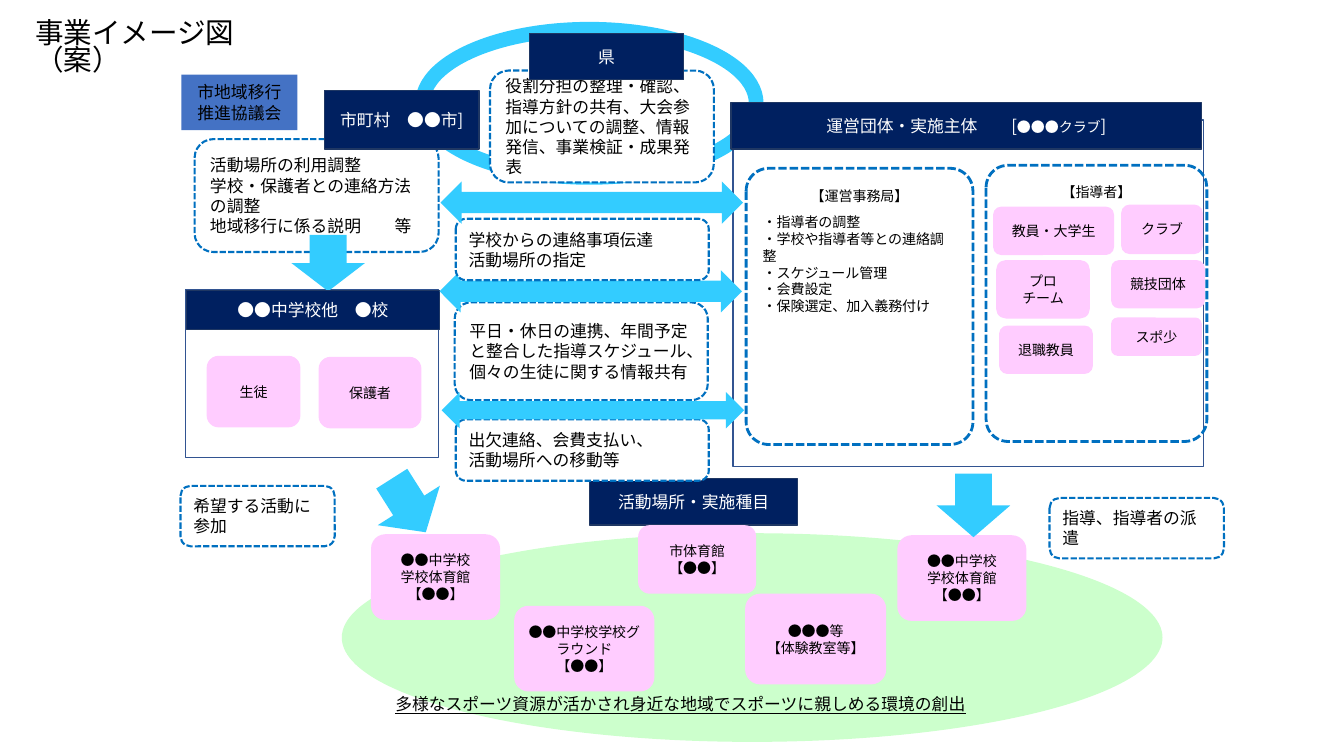
from lxml import etree
from pptx import Presentation
from pptx.dml.color import RGBColor
from pptx.enum import dml, shapes, text
from pptx.oxml import ns
from pptx.util import Inches, Pt

FONT = "Noto Sans CJK JP"
BLACK = RGBColor(0x00, 0x00, 0x00)
WHITE = RGBColor(0xFF, 0xFF, 0xFF)
NAVY = RGBColor(0x00, 0x20, 0x60)
NAVY_EDGE = RGBColor(0x1F, 0x37, 0x63)
FRAME_EDGE = RGBColor(0x32, 0x54, 0x91)
DASH_BLUE = RGBColor(0x00, 0x70, 0xC0)
COUNCIL_BLUE = RGBColor(0x44, 0x72, 0xC4)
SKY = RGBColor(0x33, 0xCC, 0xFF)
PINK = RGBColor(0xFF, 0xCC, 0xFF)
GREEN = RGBColor(0xCC, 0xFF, 0xCC)

KIND = shapes.MSO_SHAPE
ALIGN = text.PP_ALIGN
DASHED = dml.MSO_LINE.SQUARE_DOT

prs = Presentation()
prs.slide_width, prs.slide_height = Inches(13.33), Inches(7.5)
slide = prs.slides.add_slide(prs.slide_layouts[6])


def write(holder, words, size, color=BLACK, align=ALIGN.CENTER, anchor=text.MSO_ANCHOR.MIDDLE):
    frame = holder.text_frame
    frame.word_wrap = True
    frame.vertical_anchor = anchor
    frame.text = words
    for paragraph in frame.paragraphs:
        paragraph.alignment = align
        for run in paragraph.runs:
            run.font.size = Pt(size)
            run.font.color.rgb = color
            run.font.name = FONT
            east_asian = etree.SubElement(run.font._element, ns.qn("a:ea"))
            east_asian.set("typeface", FONT)
    return frame


def draw(kind, at, fill=None, edge=None, width=1, dash=None):
    shape = slide.shapes.add_shape(kind, *[Inches(length) for length in at])
    shape.shadow.inherit = False
    if fill is None:
        shape.fill.background()
    else:
        shape.fill.solid()
        shape.fill.fore_color.rgb = fill
    if edge is None:
        shape.line.fill.background()
    else:
        shape.line.color.rgb = edge
        shape.line.width = Pt(width)
        if dash is not None:
            shape.line.dash_style = dash
    return shape


# Ring that ties prefecture, city and operator together
draw(KIND.OVAL, (4.19, 0.29, 3.31, 1.47), edge=SKY, width=10.5)

# Frames of the school and the operator, and the area of activity
for at in [(1.84, 2.87, 2.51, 1.67), (7.27, 1.19, 4.67, 3.44)]:
    draw(KIND.RECTANGLE, at, WHITE, FRAME_EDGE)
draw(KIND.OVAL, (3.39, 5.29, 8.14, 2.07), GREEN)

# Panels inside the operator
OFFICE = """【運営事務局】
・指導者の調整
・学校や指導者等との連絡調整
・スケジュール管理
・会費設定
・保険選定、加入義務付け"""
for at, words in [((7.4, 1.67, 2.25, 2.74), OFFICE),
                  ((9.78, 1.64, 2.19, 2.74), "【指導者】")]:
    panel = draw(KIND.ROUNDED_RECTANGLE, at, edge=DASH_BLUE, width=2, dash=DASHED)
    panel.adjustments[0] = 0.1
    frame = write(panel, words, 10, align=ALIGN.LEFT, anchor=text.MSO_ANCHOR.TOP)
    frame.margin_top = Inches(0.12)
    frame.paragraphs[0].alignment = ALIGN.CENTER
    frame.paragraphs[0].space_after = Pt(7)

# Dashed notes, headers and arrows, in stacking order
NOTE, HEADER, BOTH_WAYS, DOWN = "note", "header", "both ways", "down"
FLOW = [
    (HEADER, (5.85, 4.75, 2.06, 0.46), "活動場所・実施種目"),
    (NOTE, (1.93, 1.38, 2.42, 1.12),
     "活動場所の利用調整\n学校・保護者との連絡方法の調整\n地域移行に係る説明　　等"),
    (HEADER, (3.22, 0.9, 1.53, 0.58), "市町村　●●市]"),
    (NOTE, (4.52, 4.16, 2.51, 0.61), "出欠連絡、会費支払い、\n活動場所への移動等"),
    (NOTE, (4.51, 3, 2.51, 0.97),
     "平日・休日の連携、年間予定と整合した指導スケジュール、\n個々の生徒に関する情報共有"),
    (NOTE, (10.41, 4.94, 1.73, 0.6), "指導、指導者の派遣"),
    (NOTE, (1.79, 4.82, 1.53, 0.6), "希望する活動に\n参加"),
    (DOWN, (2.89, 2.33, 0.73, 0.56), 0),
    (DOWN, (3.69, 4.7, 0.73, 0.63), 327.6),
    (HEADER, (1.85, 2.88, 2.51, 0.39), "●●中学校他　●校"),
    (BOTH_WAYS, (4.36, 2.68, 3, 0.42), 0),
    (NOTE, (4.52, 2.17, 2.51, 0.61), "学校からの連絡事項伝達\n活動場所の指定"),
    (BOTH_WAYS, (4.37, 1.8, 3, 0.42), 0),
    (BOTH_WAYS, (4.38, 3.89, 3, 0.36), 0),
    (NOTE, (4.86, 0.7, 2.22, 1.11),
     "役割分担の整理・確認、指導方針の共有、大会参加についての調整、情報発信、事業検証・成果発表"),
    (HEADER, (5.25, 0.33, 1.53, 0.46), "県"),
]
for role, at, content in FLOW:
    if role == NOTE:
        note = draw(KIND.ROUNDED_RECTANGLE, at, WHITE, DASH_BLUE, 1.5, DASHED)
        write(note, content, 12, align=ALIGN.LEFT)
    elif role == HEADER:
        write(draw(KIND.RECTANGLE, at, NAVY, NAVY_EDGE), content, 12, WHITE)
    else:
        kind = KIND.DOWN_ARROW if role == DOWN else KIND.LEFT_RIGHT_ARROW
        draw(kind, at, SKY).rotation = content

# Operator header, with the club name set smaller
operator = draw(KIND.RECTANGLE, (7.25, 1.02, 4.67, 0.46), NAVY, NAVY_EDGE)
operator_name = operator.text_frame.paragraphs[0]
for words in ["運営団体・実施主体　　[", "●●●クラブ", "]"]:
    operator_name.add_run().text = words
operator_name.alignment = ALIGN.CENTER
operator.text_frame.vertical_anchor = text.MSO_ANCHOR.MIDDLE
for run, size in zip(operator_name.runs, (12, 10, 12)):
    run.font.size = Pt(size)
    run.font.color.rgb = WHITE
    run.font.name = FONT
    etree.SubElement(run.font._element, ns.qn("a:ea")).set("typeface", FONT)

# Pink cards: school members, instructors, venues
CARDS = [
    ((2.05, 3.53, 0.93, 0.71), "生徒"),
    ((3.16, 3.54, 1.02, 0.71), "保護者"),
    ((9.85, 2.05, 1.2, 0.48), "教員・大学生"),
    ((11.12, 2.03, 0.81, 0.49), "クラブ"),
    ((9.88, 2.58, 0.93, 0.58), "プロ\nチーム"),
    ((11.02, 2.58, 0.93, 0.48), "競技団体"),
    ((9.91, 3.23, 0.93, 0.48), "退職教員"),
    ((11.02, 3.15, 0.9, 0.38), "スポ少"),
    ((3.68, 5.3, 1.28, 0.85), "●●中学校\n学校体育館\n【●●】"),
    ((6.33, 5.21, 1.17, 0.68), "市体育館\n【●●】"),
    ((7.39, 5.89, 1.4, 0.9), "●●●等\n【体験教室等】"),
    ((5.1, 6.01, 1.39, 0.85), "●●中学校学校グラウンド\n【●●】"),
    ((8.9, 5.31, 1.28, 0.85), "●●中学校\n学校体育館\n【●●】"),
]
for at, words in CARDS:
    write(draw(KIND.ROUNDED_RECTANGLE, at, PINK), words, 10)

# Dispatch of instructors, ending on the last venue
draw(KIND.DOWN_ARROW, (9.29, 4.7, 0.73, 0.63), SKY)

# City council
council = draw(KIND.RECTANGLE, (1.8, 0.74, 1.15, 0.55), COUNCIL_BLUE)
write(council, "市地域移行\n推進協議会", 12)

# Goal line
goal = slide.shapes.add_textbox(Inches(3.24), Inches(6.78), Inches(7.02), Inches(0.41))
goal_frame = write(goal, "多様なスポーツ資源が活かされ身近な地域でスポーツに親しめる環境の創出", 12)
goal_frame.paragraphs[0].runs[0].font.underline = True

# Title
title = slide.shapes.add_textbox(Inches(0.25), Inches(0.16), Inches(3.01), Inches(0.49))
title_frame = write(title, "事業イメージ図（案）", 20.4, align=ALIGN.LEFT, anchor=text.MSO_ANCHOR.TOP)
title_frame.paragraphs[0].line_spacing = 0.8
title_frame.paragraphs[0].space_before = Pt(10)

prs.save("out.pptx")
